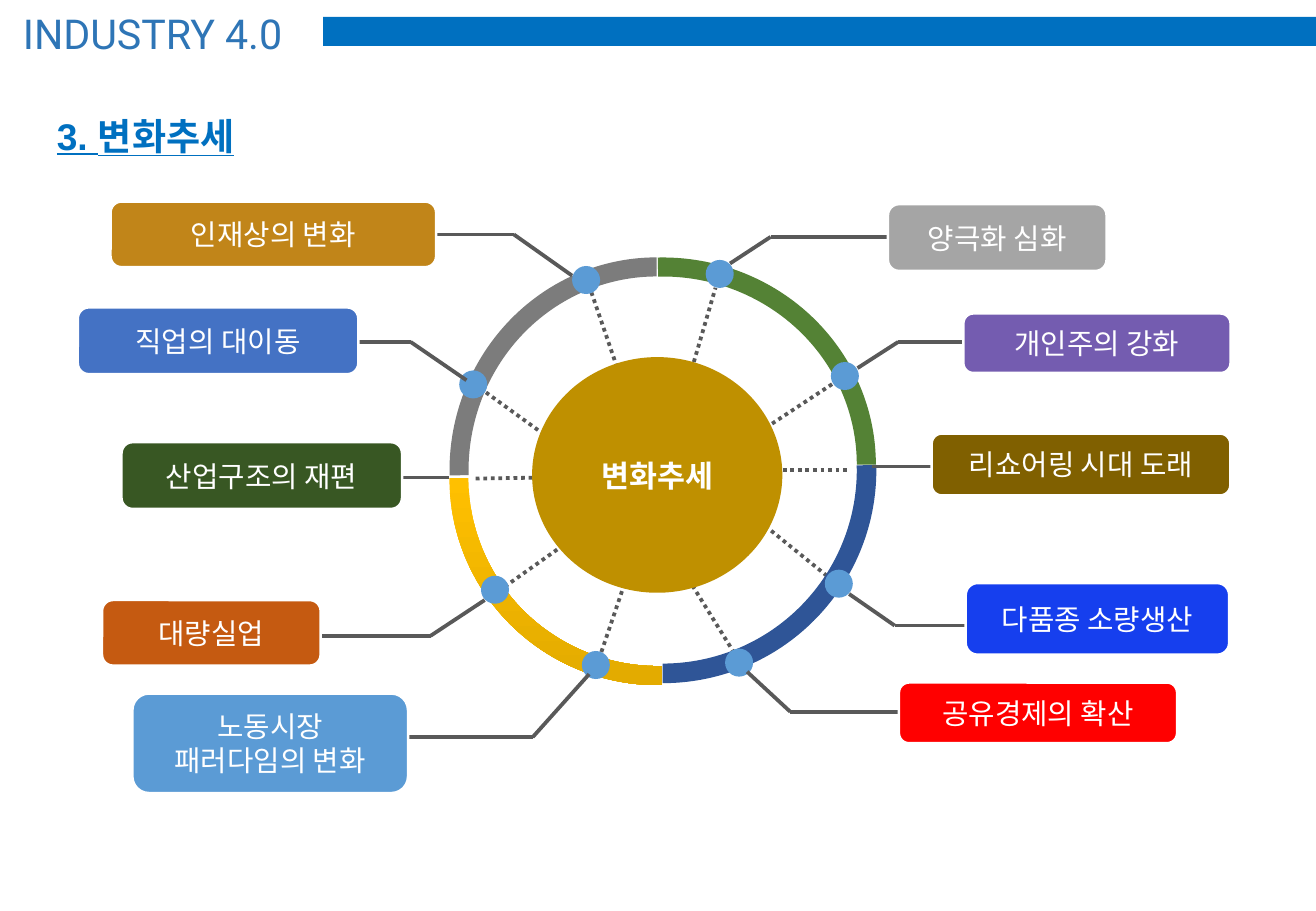
from collections import namedtuple

from lxml.etree import SubElement
from pptx import Presentation
from pptx.dml.color import RGBColor
from pptx.enum.dml import MSO_LINE
from pptx.enum.shapes import MSO_CONNECTOR, MSO_SHAPE
from pptx.enum.text import MSO_ANCHOR, PP_ALIGN
from pptx.oxml import parse_xml
from pptx.oxml.ns import nsdecls, qn
from pptx.util import Pt

WHITE = RGBColor(0xFF, 0xFF, 0xFF)
LINE_GRAY = RGBColor(0x59, 0x59, 0x59)
BANNER_BLUE = RGBColor(0x00, 0x70, 0xC0)
TITLE_BLUE = RGBColor(0x2E, 0x75, 0xB6)
SKY_BLUE = RGBColor(0x5B, 0x9B, 0xD5)
HUB_GOLD = RGBColor(0xBF, 0x90, 0x00)
RING_GREEN = RGBColor(0x54, 0x82, 0x35)
RING_GRAY = RGBColor(0x7C, 0x7C, 0x7C)
RING_NAVY = RGBColor(0x2F, 0x55, 0x97)
RING_YELLOW = RGBColor(0xFF, 0xC0, 0x00)
RING_AMBER = RGBColor(0xE3, 0xAB, 0x00)
GRAY = RGBColor(0xA5, 0xA5, 0xA5)
PURPLE = RGBColor(0x74, 0x5C, 0xB0)
OLIVE = RGBColor(0x80, 0x60, 0x00)
BRIGHT_BLUE = RGBColor(0x16, 0x3F, 0xEE)
RED = RGBColor(0xFF, 0x00, 0x00)
ORANGE = RGBColor(0xC5, 0x5A, 0x11)
DARK_GREEN = RGBColor(0x38, 0x57, 0x23)
MID_BLUE = RGBColor(0x44, 0x72, 0xC4)
OCHRE = RGBColor(0xC1, 0x85, 0x19)

DOT_SIZE = 16.6
HUB_BOX = (315.4, 211.7, 148.3, 139.7)

# Frame before rotation, rotation, colour
RING = [
    ((266.4, 152.6, 252.7, 245.5), 180, RING_GREEN),
    ((266.4, 160.6, 247, 245.5), 0, None),
    ((262.8, 156.2, 252.7, 245.5), 90, RING_GRAY),
    ((266.4, 151.9, 252.7, 253.4), 270, RING_NAVY),
]

# Leader runs from the ring to the bend, then level to the label.
Trend = namedtuple("Trend", "text color box dot leader bend spoke")
TRENDS = [
    Trend("양극화 심화", GRAY, (526.3, 121, 129.6, 39.6), (418.3, 154.1),
          (432.7, 156.2), (456.8, 140.4), ((407.5, 227.5), (424.1, 170.6))),
    Trend("개인주의 강화", PURPLE, (571, 185.8, 158.4, 35.3), (492.5, 214.6),
          (508.3, 218.2), (532.4, 202.7), ((446.4, 258.5), (494.6, 226.8))),
    Trend("리쇼어링 시대 도래", OLIVE, (552.2, 257, 177.1, 36.7), None,
          (517, 276.5), None, ((455, 278.6), (504, 278.6))),
    Trend("다품종 소량생산", BRIGHT_BLUE, (572.4, 345.6, 156.2, 42.5), (488.9, 337.7),
          (503.3, 352.1), (530.3, 370.8), ((453.6, 311.8), (491.8, 342.7))),
    Trend("공유경제의 확산", RED, (532.8, 404.6, 164.9, 36), (429.8, 384.5),
          (442.8, 398.2), (468.4, 421.9), ((401, 331.9), (434.9, 386.6))),
    Trend("노동시장\n패러다임의 변화", SKY_BLUE, (78.5, 411.1, 163.4, 59), (344.9, 385.9),
          (349.2, 399.6), (315.7, 437), ((373, 337.7), (356.4, 386.6))),
    Trend("대량실업", ORANGE, (60.5, 355.7, 129.6, 38.9), (285.1, 341.3),
          (287.3, 355.7), (255.2, 376.9), ((344.9, 315.4), (298.1, 348.5))),
    Trend("산업구조의 재편", DARK_GREEN, (72, 262.1, 166.3, 39.6), None,
          (266.4, 283), None, ((329, 283), (280.1, 283.7))),
    Trend("직업의 대이동", MID_BLUE, (46.1, 182.2, 166.3, 39.6), (272.2, 219.6),
          (276.5, 225.4), (243.4, 202.7), ((329.8, 262.8), (288, 232.6))),
    Trend("인재상의 변화", OCHRE, (65.5, 119.5, 193, 38.9), (339.1, 157.7),
          (339.1, 163.4), (304.6, 139), ((370.1, 230.4), (350.6, 173.5))),
]


def add_line(slide, start, end, dotted=False):
    connector = slide.shapes.add_connector(
        MSO_CONNECTOR.STRAIGHT, *(Pt(value) for value in (*start, *end)))
    connector.line.color.rgb = LINE_GRAY
    connector.line.width = Pt(2.25)
    if dotted:
        connector.line.dash_style = MSO_LINE.ROUND_DOT
    SubElement(connector._element.spPr, qn("a:effectLst"))


def add_filled(slide, kind, box, color=None):
    shape = slide.shapes.add_shape(kind, *(Pt(value) for value in box))
    shape.shadow.inherit = False
    shape.line.fill.background()
    if color is not None:
        shape.fill.solid()
        shape.fill.fore_color.rgb = color
    return shape


def write(shape, text, font_name, size, color, bold=False, align=PP_ALIGN.CENTER):
    frame = shape.text_frame
    frame.text = text
    frame.word_wrap = True
    frame.vertical_anchor = MSO_ANCHOR.MIDDLE
    for paragraph in frame.paragraphs:
        paragraph.alignment = align
        for run in paragraph.runs:
            run.font.name = font_name
            run.font.size = Pt(size)
            run.font.bold = bold
            run.font.color.rgb = color
    return frame.paragraphs[0]


def add_text(slide, box, *style):
    text_box = slide.shapes.add_textbox(*(Pt(value) for value in box))
    return write(text_box, *style, align=PP_ALIGN.LEFT)


def add_ring(slide):
    for box, rotation, color in RING:
        arc = add_filled(slide, MSO_SHAPE.BLOCK_ARC, box, color)
        arc.rotation = rotation
        for index, value in enumerate((53.18, 108.01, 0.046)):
            arc.adjustments[index] = value
        if color is None:
            arc.fill.gradient()
            arc.fill.gradient_angle = 270
            stops = ((0.5, RING_YELLOW), (1, RING_AMBER))
            for stop, (position, stop_color) in zip(arc.fill.gradient_stops, stops):
                stop.position = position
                stop.color.rgb = stop_color


def add_leader(slide, trend):
    left, _, width, _ = trend.box
    bend = trend.bend or trend.leader
    label_edge = left if left > trend.leader[0] else left + width
    if trend.bend:
        add_line(slide, trend.leader, bend)
    add_line(slide, bend, (label_edge, bend[1]))


def add_label(slide, trend):
    label = add_filled(slide, MSO_SHAPE.ROUNDED_RECTANGLE, trend.box, trend.color)
    label.line.color.rgb = WHITE
    label.line.width = Pt(1.5)
    write(label, trend.text, "Calibri", 17, WHITE)


def add_hub(slide):
    hub = add_filled(slide, MSO_SHAPE.OVAL, HUB_BOX, HUB_GOLD)
    paragraph = write(hub, "변화추세", "Calibri", 18, WHITE, True)
    text_shadow = parse_xml(
        f'<a:effectLst {nsdecls("a")}><a:outerShdw blurRad="38100" dist="38100" '
        'dir="2700000" algn="tl"><a:srgbClr val="000000"><a:alpha val="43000"/>'
        '</a:srgbClr></a:outerShdw></a:effectLst>')
    paragraph.runs[0].font._element.find(qn("a:solidFill")).addnext(text_shadow)


def main():
    presentation = Presentation()
    presentation.slide_width, presentation.slide_height = Pt(780), Pt(540)
    slide = presentation.slides.add_slide(presentation.slide_layouts[6])

    for trend in TRENDS:
        add_line(slide, *trend.spoke, dotted=True)
    add_ring(slide)
    for trend in TRENDS:
        if trend.dot:
            add_filled(slide, MSO_SHAPE.OVAL, (*trend.dot, DOT_SIZE, DOT_SIZE), SKY_BLUE)
    for trend in TRENDS:
        add_leader(slide, trend)
        add_label(slide, trend)
    add_hub(slide)

    add_filled(slide, MSO_SHAPE.RECTANGLE, (191.5, 10, 588.5, 17.3), BANNER_BLUE)
    title = add_text(slide, (6.5, -2.2, 519, 46.8), "INDUSTRY 4.0", "Roboto", 24.4, TITLE_BLUE)
    title.line_spacing = 0.9
    heading = add_text(slide, (26.6, 60.5, 705, 35.3), "3. 변화추세", "Arial", 22, BANNER_BLUE, True)
    heading.line_spacing = 1.15
    heading.space_after = Pt(10)
    heading.runs[0].font.underline = True

    presentation.save("out.pptx")


if __name__ == "__main__":
    main()
